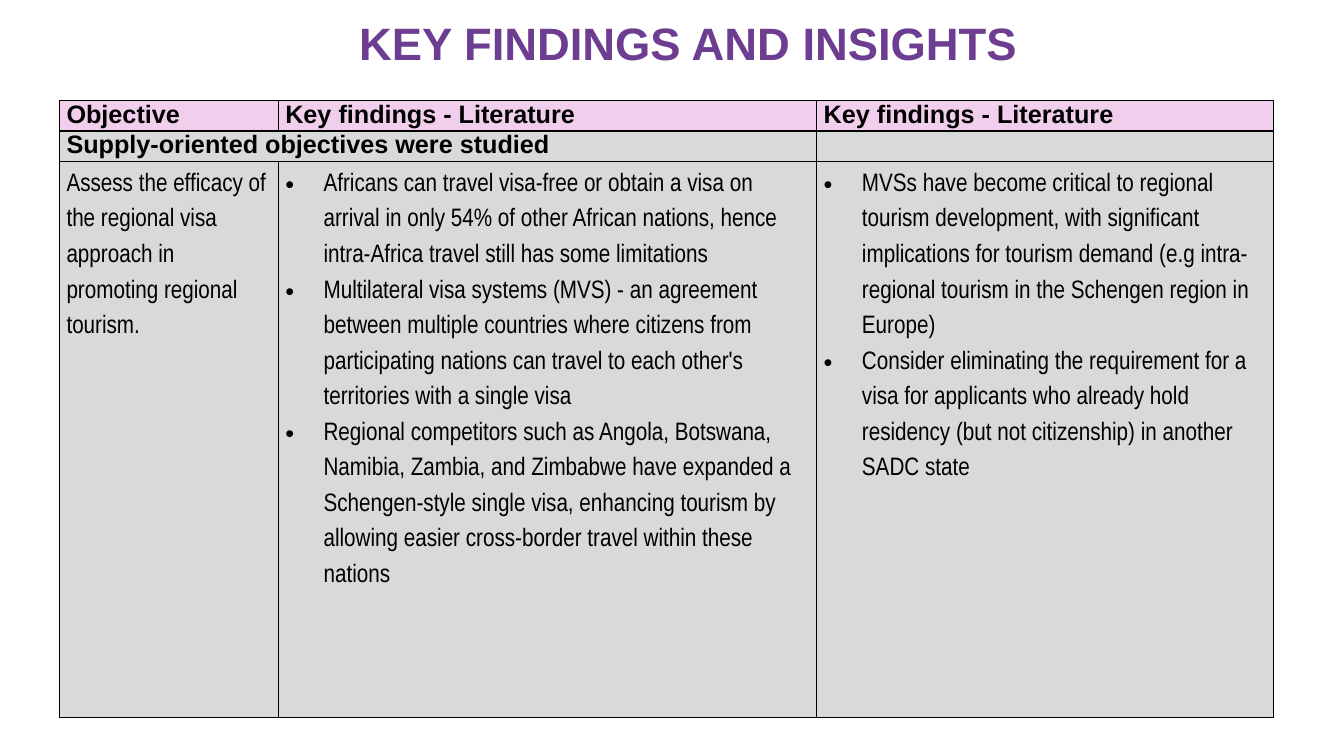
from lxml.etree import SubElement
from pptx import Presentation
from pptx.dml.color import RGBColor
from pptx.enum.text import MSO_ANCHOR as ANCHOR, PP_ALIGN as ALIGN
from pptx.oxml import parse_xml
from pptx.oxml.ns import nsdecls, qn
from pptx.util import Inches, Pt

W, H = 13.33, 7.5
COLS = (2.17, 5.34, 4.53)
ROWS = (0.28, 0.28, 5.52)
PURPLE, PINK, GREY, BLACK = "6C3D91", "F2CEED", "D9D9D9", "000000"
TITLE = dict(name="Arial", size=Pt(32.4), bold=True)
HEAD = dict(name="Arial", size=Pt(18), bold=True)
BODY = dict(name="Arial Narrow", size=Pt(18), bold=False)
HEAD_PARA = dict(space_after=Pt(8))
BODY_PARA = dict(line_spacing=1.5)

OBJECTIVE = "Assess the efficacy of the regional visa approach in promoting regional tourism."
LITERATURE = [
    "Africans can travel visa-free or obtain a visa on arrival in only 54% of other "
    "African nations, hence intra-Africa travel still has some limitations",
    "Multilateral visa systems (MVS) - an agreement between multiple countries where "
    "citizens from participating nations can travel to each other's territories with a single visa",
    "Regional competitors such as Angola, Botswana, Namibia, Zambia, and Zimbabwe have "
    "expanded a Schengen-style single visa, enhancing tourism by allowing easier "
    "cross-border travel within these nations",
]
IMPLICATIONS = [
    "MVSs have become critical to regional tourism development, with significant "
    "implications for tourism demand (e.g intra-regional tourism in the Schengen region in Europe)",
    "Consider eliminating the requirement for a visa for applicants who already hold "
    "residency (but not citizenship) in another SADC state",
]
FINDINGS = [
    [["Objective"], ["Key findings - Literature"], ["Key findings - Literature"]],
    [["Supply-oriented objectives were studied"], [], []],
    [[OBJECTIVE], LITERATURE, IMPLICATIONS],
]


def rgb(value):
    return RGBColor.from_string(value)


def apply(obj, values):
    for name, value in values.items():
        setattr(obj, name, value)


def write(p, text, font, color, para):
    apply(p, para)
    r = p.add_run()
    r.text = text
    apply(r.font, font)
    r.font.color.rgb = rgb(color)


def add_bullet(p):
    pPr = p._p.get_or_add_pPr()
    indent = Inches(0.38)
    pPr.set("marL", str(indent))
    pPr.set("indent", str(-indent))
    SubElement(pPr, qn("a:buFont"), typeface="Arial")
    SubElement(pPr, qn("a:buChar"), char="•")


def add_borders(cell):
    tcPr = cell._tc.get_or_add_tcPr()
    for i, side in enumerate(("lnL", "lnR", "lnT", "lnB")):
        tcPr.insert(i, parse_xml(
            f'<a:{side} {nsdecls("a")} w="{Pt(1)}"><a:solidFill>'
            f'<a:srgbClr val="{BLACK}"/></a:solidFill></a:{side}>'))


def fill_cell(cell, texts, color, font, para, bulleted):
    apply(cell, dict(margin_left=Inches(0.07), margin_right=Inches(0.07),
                     margin_top=0, margin_bottom=0))
    cell.fill.solid()
    cell.fill.fore_color.rgb = rgb(color)
    add_borders(cell)
    tf = cell.text_frame
    for i, text in enumerate(texts):
        p = tf.add_paragraph() if i else tf.paragraphs[0]
        if bulleted:
            add_bullet(p)
        write(p, text, font, BLACK, para)
    if not texts:
        SubElement(tf.paragraphs[0]._p, qn("a:endParaRPr"), sz="1200")


def add_title(slide, text, x, y, w, h):
    tf = slide.shapes.add_textbox(Inches(x), Inches(y), Inches(w), Inches(h)).text_frame
    apply(tf, dict(word_wrap=True, vertical_anchor=ANCHOR.MIDDLE,
                   margin_top=0, margin_bottom=0))
    write(tf.paragraphs[0], text, TITLE, PURPLE,
          dict(alignment=ALIGN.CENTER, line_spacing=0.9))


def add_findings(slide, x, y):
    table = slide.shapes.add_table(
        len(ROWS), len(COLS), Inches(x), Inches(y),
        Inches(sum(COLS)), Inches(sum(ROWS))).table
    table.first_row = table.horz_banding = False
    for col, width in zip(table.columns, COLS):
        col.width = Inches(width)
    for row, height in zip(table.rows, ROWS):
        row.height = Inches(height)
    table.cell(1, 0).merge(table.cell(1, 1))
    for i, row in enumerate(FINDINGS):
        body = i == len(ROWS) - 1
        for j, texts in enumerate(row):
            cell = table.cell(i, j)
            if not cell.is_spanned:
                fill_cell(cell, texts, GREY if i else PINK,
                          BODY if body else HEAD,
                          BODY_PARA if body else HEAD_PARA, body and j > 0)


def main():
    prs = Presentation()
    prs.slide_width, prs.slide_height = Inches(W), Inches(H)
    slide = prs.slides.add_slide(prs.slide_layouts[6])
    add_title(slide, "KEY FINDINGS AND INSIGHTS", 1.69, 0.19, 10.27, 0.53)
    add_findings(slide, 0.59, 1)
    prs.save("out.pptx")


if __name__ == "__main__":
    main()
